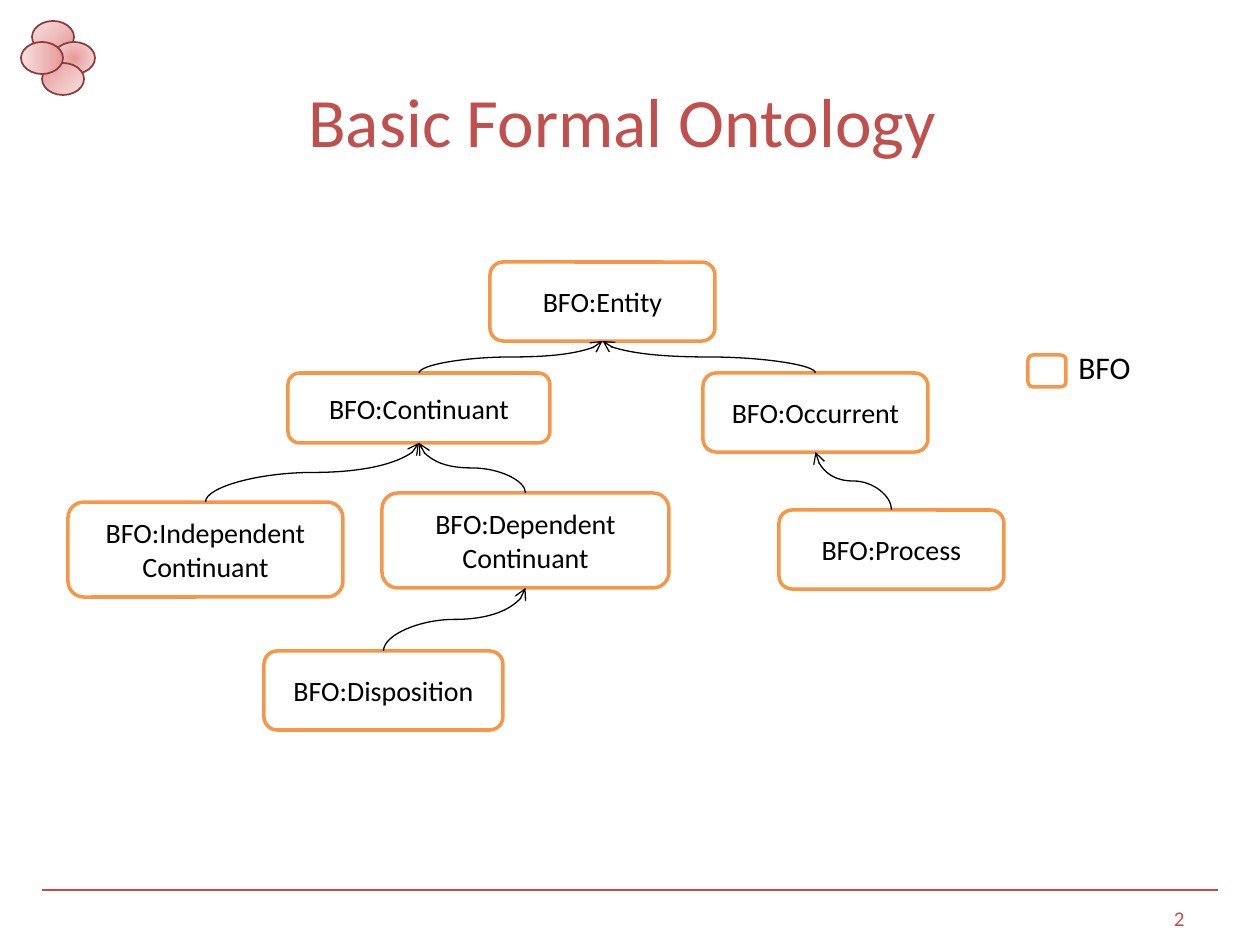
from lxml.etree import SubElement
from pptx import Presentation
from pptx.dml.color import RGBColor
from pptx.enum.shapes import MSO_CONNECTOR, MSO_SHAPE
from pptx.enum.text import MSO_ANCHOR, PP_ALIGN
from pptx.oxml import parse_xml
from pptx.oxml.ns import nsdecls, qn
from pptx.util import Emu, Pt

PX = 914400 / 126
THEME = {
    "font": "Calibri",
    "accent": RGBColor(0xC0, 0x50, 0x4D),
    "rule": RGBColor(0xBF, 0x4C, 0x48),
    "petal_line": RGBColor(0x8E, 0x3B, 0x39),
    "petal_stops": (RGBColor(0xE7, 0x9A, 0x99), RGBColor(0xF6, 0xE1, 0xE1)),
    "box_line": RGBColor(0xF7, 0x96, 0x46),
    "white": RGBColor(0xFF, 0xFF, 0xFF),
    "black": RGBColor(0, 0, 0),
    "title_size": 39.6,
    "legend_size": 18,
    "box_size": 16,
    "number_size": 12,
}


def px(*lengths):
    return [Emu(round(length * PX)) for length in lengths]


def write(shape, text, size, color, align, anchor=MSO_ANCHOR.MIDDLE):
    frame = shape.text_frame
    frame.word_wrap = True
    frame.vertical_anchor = anchor
    paragraph = frame.paragraphs[0]
    paragraph.alignment = align
    run = paragraph.add_run()
    run.text = text
    run.font.name = THEME["font"]
    run.font.size = Pt(size)
    run.font.color.rgb = color
    return paragraph


presentation = Presentation()
presentation.slide_width, presentation.slide_height = px(1260, 945)
slide = presentation.slides.add_slide(presentation.slide_layouts[6])
shapes = slide.shapes

# Corner ornament: overlapping ovals, None marks the radial gradient
for left, top, angle in [(32, 21, 135), (53, 42, None), (42, 63, 315), (21, 42, 180)]:
    petal = shapes.add_shape(MSO_SHAPE.OVAL, *px(left, top, 42, 32))
    petal.shadow.inherit = False
    petal.fill.gradient()
    for stop, color in zip(petal.fill.gradient_stops, THEME["petal_stops"]):
        stop.color.rgb = color
    if angle is None:
        linear = petal.element.spPr.find(".//" + qn("a:lin"))
        radial = parse_xml(
            f'<a:path {nsdecls("a")} path="circle">'
            '<a:fillToRect l="50000" t="50000" r="50000" b="50000"/></a:path>'
        )
        linear.getparent().replace(linear, radial)
    else:
        petal.fill.gradient_angle = angle
    petal.line.color.rgb = THEME["petal_line"]
    petal.line.width = Pt(1)

# Footer rule with its soft shadow
rule = shapes.add_connector(MSO_CONNECTOR.STRAIGHT, *px(42, 890, 1218, 890))
rule.line.color.rgb = THEME["rule"]
rule.line.width = Pt(1)
rule.element.spPr.append(parse_xml(
    f'<a:effectLst {nsdecls("a")}><a:outerShdw blurRad="152400" dist="317500" '
    'dir="5400000" sx="90000" sy="-19000" rotWithShape="0">'
    '<a:srgbClr val="000000"><a:alpha val="15000"/></a:srgbClr>'
    '</a:outerShdw></a:effectLst>'
))

# Title and slide number
title = shapes.add_textbox(*px(63, 84, 1134, 110))
write(title, "Basic Formal Ontology ", THEME["title_size"], THEME["accent"],
      PP_ALIGN.CENTER).add_line_break()
number = shapes.add_textbox(*px(903, 901, 294, 34))
write(number, "2", THEME["number_size"], THEME["accent"], PP_ALIGN.RIGHT)

# Class boxes, and the legend swatch without text
boxes = {}
for name, left, top, width, height in [
    ("Entity", 490, 262, 225, 79),
    ("Continuant", 288, 373, 262, 70),
    ("Occurrent", 703, 373, 225, 79),
    ("Process", 779, 510, 225, 79),
    ("Independent Continuant", 68, 502, 275, 95),
    ("Dependent Continuant", 382, 493, 287, 95),
    ("Disposition", 264, 651, 239, 79),
    ("", 1028, 355, 38, 32),
]:
    box = shapes.add_shape(MSO_SHAPE.ROUNDED_RECTANGLE, *px(left, top, width, height))
    box.shadow.inherit = False
    box.fill.solid()
    box.fill.fore_color.rgb = THEME["white"]
    box.line.color.rgb = THEME["box_line"]
    box.line.width = Pt(2)
    if name:
        write(box, f"BFO:{name}", THEME["box_size"], THEME["black"], PP_ALIGN.CENTER)
        boxes[name] = box

# Legend label
legend = shapes.add_textbox(*px(1066, 342, 98, 50))
write(legend, "BFO", THEME["legend_size"], THEME["black"], PP_ALIGN.LEFT, MSO_ANCHOR.TOP)

# Curved arrows from the top of each child to the bottom of its parent
for child, parent in [
    ("Continuant", "Entity"),
    ("Occurrent", "Entity"),
    ("Independent Continuant", "Continuant"),
    ("Dependent Continuant", "Continuant"),
    ("Process", "Occurrent"),
    ("Disposition", "Dependent Continuant"),
]:
    arrow = shapes.add_connector(MSO_CONNECTOR.CURVE, 0, 0, 0, 0)
    arrow.begin_connect(boxes[child], 0)
    arrow.end_connect(boxes[parent], 2)
    rightward = arrow.end_x > arrow.begin_x
    # A quarter turn makes the curve leave and arrive vertically
    left, top, width, height = arrow.left, arrow.top, arrow.width, arrow.height
    arrow.left = Emu(left + (width - height) // 2)
    arrow.top = Emu(top + (height - width) // 2)
    arrow.width, arrow.height = height, width
    transform = arrow.element.spPr.find(qn("a:xfrm"))
    transform.set("rot", "5400000" if rightward else "16200000")
    transform.set("flipH", "1" if rightward else "0")
    transform.set("flipV", "1")
    arrow.line.color.rgb = THEME["black"]
    arrow.line.width = Pt(0.75)
    SubElement(arrow.element.spPr.find(qn("a:ln")), qn("a:tailEnd"), type="arrow")
    SubElement(arrow.element.spPr, qn("a:effectLst"))

presentation.save("out.pptx")
